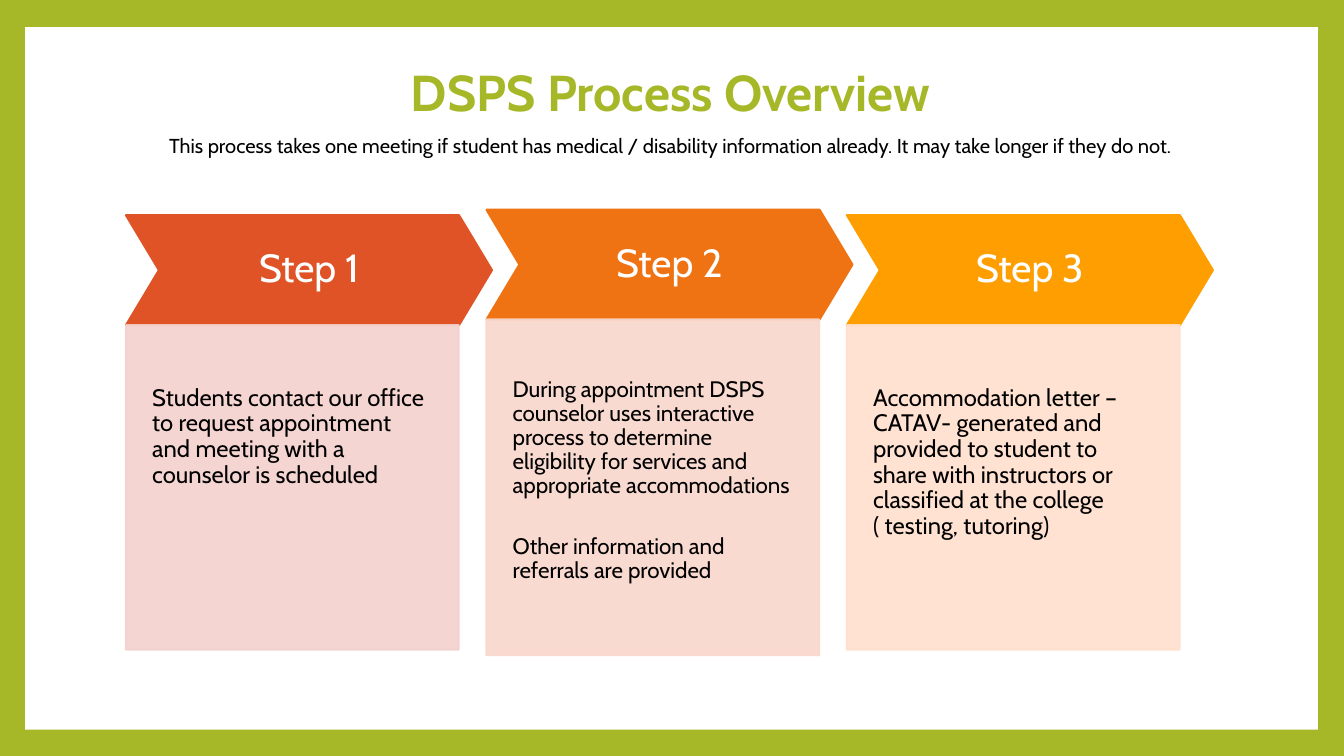
from dataclasses import dataclass

from pptx import Presentation
from pptx.dml.color import RGBColor
from pptx.enum.shapes import MSO_SHAPE as Preset
from pptx.enum.text import MSO_ANCHOR as Anchor, PP_ALIGN as Align
from pptx.oxml.ns import qn
from pptx.util import Inches, Pt
from lxml import etree


@dataclass(frozen=True)
class Theme:
    font: str = "Cabin"
    green: str = "A6B727"
    white: str = "FFFFFF"
    black: str = "000000"
    title_size: float = 36
    subtitle_size: float = 14.4
    step_size: float = 28
    line_width: float = 1.5
    panel_alpha: int = 90


@dataclass(frozen=True)
class Step:
    name: str
    color: str
    tint: str
    size: float
    panel_height: float
    text_inset: float
    paragraphs: tuple


THEME = Theme()

TITLE = "DSPS Process Overview"
SUBTITLE = (
    "This process takes one meeting if student has medical / disability "
    "information already. It may take longer if they do not."
)
STEPS = (
    Step("Step 1", "DF5327", "F3D1CD", 17, 3.22, 0.6, (
        "Students contact our office to request appointment and meeting "
        "with a counselor is scheduled",
    )),
    Step("Step 2", "EF7213", "F9D7CC", 16, 3.33, 0.58, (
        "During appointment DSPS counselor uses interactive process to "
        "determine eligibility for services and appropriate accommodations",
        "Other information and referrals are provided",
    )),
    Step("Step 3", "FE9E00", "FFDFCC", 17, 3.22, 0.6, (
        "Accommodation letter – CATAV- generated and provided to student to "
        "share with instructors or classified at the college ( testing, tutoring)",
    )),
)

STEPS_LEFT = 1.25
STEP_PITCH = 3.575
STEPS_MIDDLE = 4.29
HEADER_WIDTH, HEADER_HEIGHT = 3.63, 1.09
PANEL_WIDTH = 3.3
PANEL_INSET = 0.26
PARAGRAPH_GAP = 26


def rgb(color):
    return RGBColor.from_string(color)


def set_alpha(fill_parent, percent):
    for color in fill_parent.iter(qn("a:srgbClr")):
        etree.SubElement(color, qn("a:alpha"), val=str(percent * 1000))


def add_block(slide, preset, left, top, width, height, color, outlined=True):
    shape = slide.shapes.add_shape(
        preset, Inches(left), Inches(top), Inches(width), Inches(height))
    shape.shadow.inherit = False
    shape.fill.solid()
    shape.fill.fore_color.rgb = rgb(color)
    if outlined:
        shape.line.color.rgb = rgb(color)
        shape.line.width = Pt(THEME.line_width)
    else:
        shape.line.fill.background()
    return shape


def setup_frame(shape, anchor, side=0, top=0):
    frame = shape.text_frame
    frame.word_wrap = True
    frame.vertical_anchor = anchor
    frame.margin_left = frame.margin_right = Inches(side)
    frame.margin_top = Inches(top)
    frame.margin_bottom = 0
    return frame


def write(paragraph, text, size, color, align=Align.CENTER, bold=False, before=0):
    paragraph.text = text
    paragraph.alignment = align
    paragraph.line_spacing = 0.9
    paragraph.space_before = Pt(before)
    font = paragraph.font
    font.name = THEME.font
    font.size = Pt(size)
    font.bold = bold
    font.color.rgb = rgb(color)


def add_heading(slide):
    box = slide.shapes.add_textbox(
        Inches(1.25), Inches(0.67), Inches(10.8), Inches(1.07))
    frame = setup_frame(box, Anchor.TOP)
    write(frame.paragraphs[0], TITLE, THEME.title_size, THEME.green, bold=True)
    write(frame.add_paragraph(), SUBTITLE, THEME.subtitle_size, THEME.black, before=10)


def add_step(slide, step, left):
    top = STEPS_MIDDLE - (HEADER_HEIGHT + step.panel_height) / 2
    header = add_block(
        slide, Preset.CHEVRON, left, top, HEADER_WIDTH, HEADER_HEIGHT, step.color)
    header.adjustments[0] = 0.3
    frame = setup_frame(header, Anchor.MIDDLE)
    write(frame.paragraphs[0], step.name, THEME.step_size, THEME.white)

    panel = add_block(
        slide, Preset.RECTANGLE, left, top + HEADER_HEIGHT,
        PANEL_WIDTH, step.panel_height, step.tint)
    set_alpha(panel.element.spPr, THEME.panel_alpha)
    frame = setup_frame(panel, Anchor.TOP, PANEL_INSET, step.text_inset)
    for index, text in enumerate(step.paragraphs):
        paragraph = frame.add_paragraph() if index else frame.paragraphs[0]
        write(paragraph, text, step.size, THEME.black, Align.LEFT,
              before=PARAGRAPH_GAP if index else 0)


def main():
    presentation = Presentation()
    presentation.slide_width = Inches(13.33)
    presentation.slide_height = Inches(7.5)
    slide = presentation.slides.add_slide(presentation.slide_layouts[6])
    slide.background.fill.solid()
    slide.background.fill.fore_color.rgb = rgb(THEME.green)

    add_block(slide, Preset.RECTANGLE, 0.25, 0.27, 12.82, 6.97,
              THEME.white, outlined=False)
    add_heading(slide)
    for index, step in enumerate(STEPS):
        add_step(slide, step, STEPS_LEFT + index * STEP_PITCH)
    presentation.save("out.pptx")


if __name__ == "__main__":
    main()
